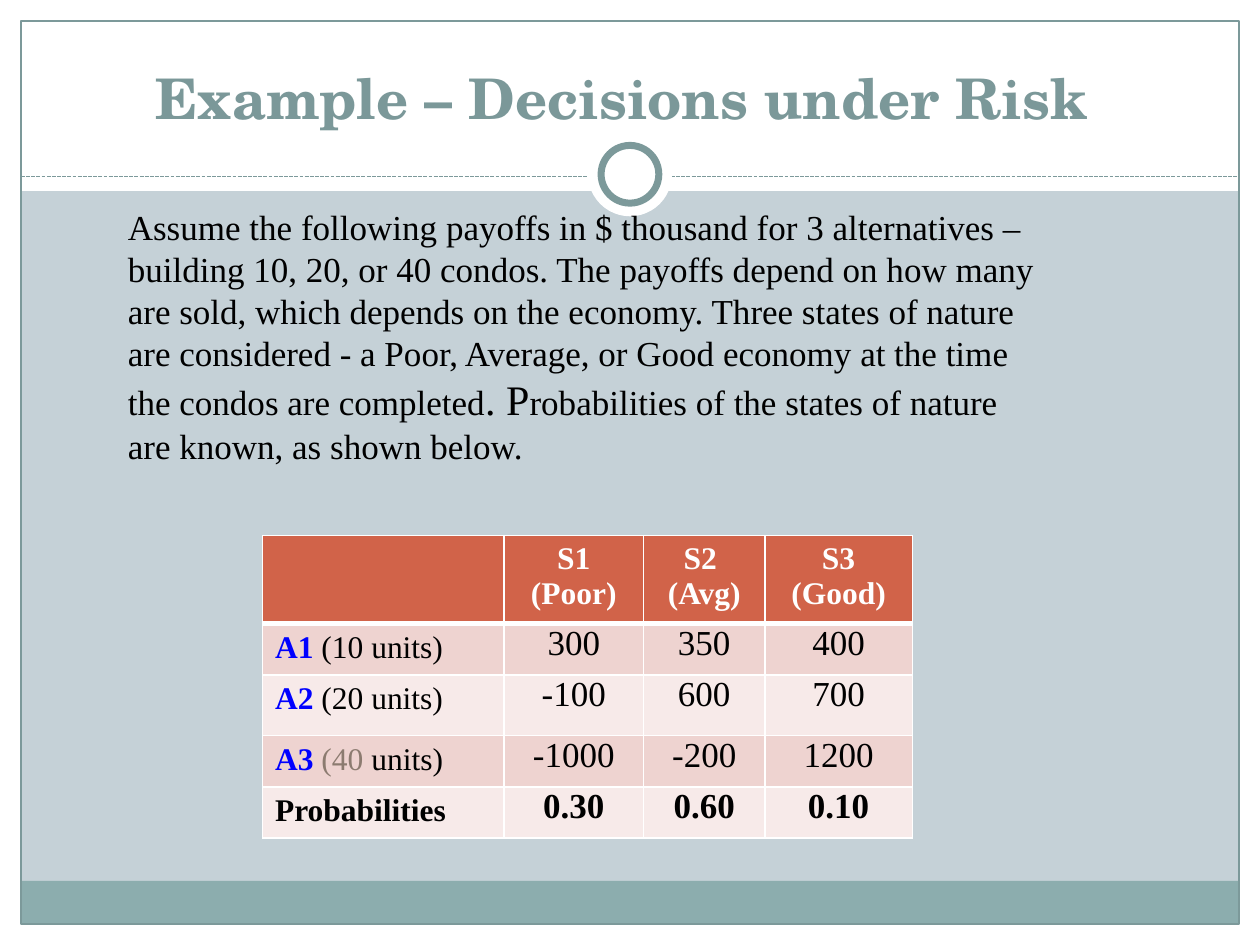
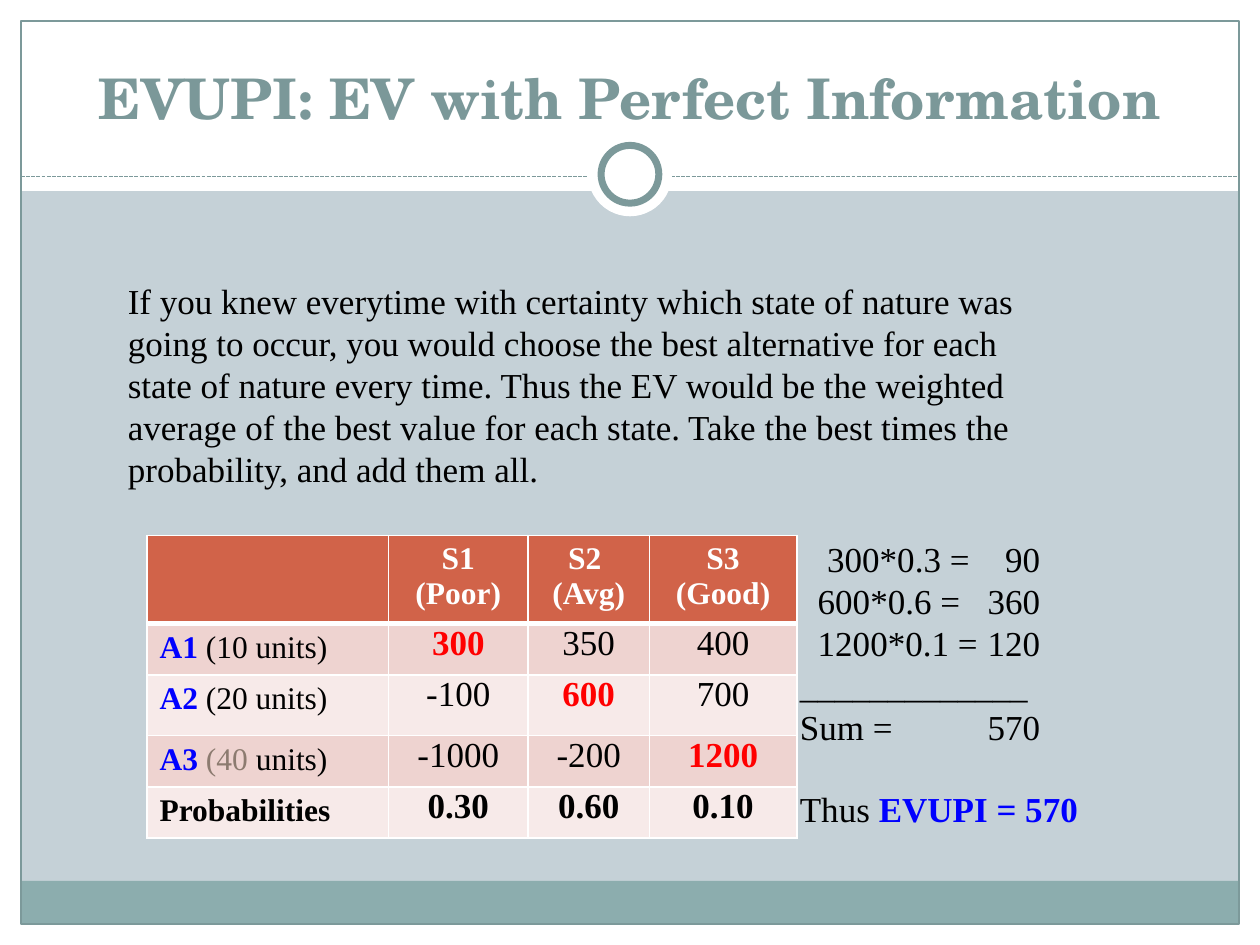
from dataclasses import dataclass
from typing import NamedTuple

from lxml import etree
from pptx import Presentation
from pptx.dml.color import RGBColor
from pptx.enum.dml import MSO_LINE
from pptx.enum.shapes import MSO_CONNECTOR, MSO_SHAPE
from pptx.enum.text import MSO_ANCHOR, PP_ALIGN
from pptx.oxml.ns import qn
from pptx.util import Emu, Inches, Pt

RECT, OVAL = MSO_SHAPE.RECTANGLE, MSO_SHAPE.OVAL
STRAIGHT, DASH = MSO_CONNECTOR.STRAIGHT, MSO_LINE.SQUARE_DOT
LEFT, CENTER = PP_ALIGN.LEFT, PP_ALIGN.CENTER
TOP, BOTTOM = MSO_ANCHOR.TOP, MSO_ANCHOR.BOTTOM

# Grid: 120 columns by 90 rows of square units
COLS, ROWS = 120, 90
WIDTH, HEIGHT = Inches(10), Inches(7.5)
UNIT = WIDTH / COLS
EDGE = 2

COLORS = {
    "back": "C5D1D7", "white": "FFFFFF", "band": "8CADAE", "rule": "7C999A",
    "title": "7B9899", "black": "000000", "header": "D16349", "odd": "EED3D0",
    "even": "F7EAE9", "blue": "0000FF", "red": "FF0000", "muted": "8C7B70",
}
SERIF, HEADING = "Times New Roman", "TeX Gyre Schola"


class Box(NamedTuple):
    x: float
    y: float
    w: float
    h: float


class Run(NamedTuple):
    text: str
    color: str = "black"
    size: float = 20
    bold: bool = False
    font: str = SERIF


@dataclass
class Part:
    box: Box
    fill: str = ""
    line: str = ""
    weight: float = 0
    kind: int = RECT


FRAME_PARTS = [
    Part(Box(0, ROWS - EDGE, COLS, EDGE), "white"),
    Part(Box(0, 0, COLS, 18.2), "white"),
    Part(Box(0, 0, EDGE, ROWS), "white"),
    Part(Box(COLS - EDGE, 0, EDGE, ROWS), "white"),
    Part(Box(EDGE, 83.9, COLS - 2 * EDGE, 4.1), "band"),
    Part(Box(EDGE, EDGE, COLS - 2 * EDGE, ROWS - 2 * EDGE), "", "rule", 0.75),
]
RING_PARTS = [
    Part(Box(56, 12.6, 8, 8), "white", kind=OVAL),
    Part(Box(57.25, 13.85, 5.5, 5.5), "white", "rule", 4, OVAL),
]

# Payoff table
COL_WIDTHS = [23, 13.3, 11.55, 14.05]
ROW_HEIGHTS = [8.4, 4.87, 5.8, 4.87, 4.87]
STATES = [("S1", "(Poor)"), ("S2 ", "(Avg)"), ("S3", "(Good)")]
LABELS = [
    [Run("A1", "blue", 18, True), Run(" (10 units)", size=18)],
    [Run("A2", "blue", 18, True), Run(" (20 units)", size=18)],
    [Run("A3 ", "blue", 18, True), Run("(40 ", "muted", 18), Run("units)", size=18)],
    [Run("Probabilities", size=18, bold=True)],
]
VALUES = [
    ["300", "350", "400"],
    ["-100", "600", "700"],
    ["-1000", "-200", "1200"],
    ["0.30", "0.60", "0.10"],
]


def u(n: float) -> Emu:
    return Emu(round(n * UNIT))


def rgb(name: str) -> RGBColor:
    return RGBColor.from_string(COLORS[name])


def write(tf, paragraphs: list, align=LEFT, anchor=TOP) -> None:
    """Fill a text frame with paragraphs, each a list of runs."""
    tf.word_wrap = True
    tf.vertical_anchor = anchor
    for i, runs in enumerate(paragraphs):
        p = tf.paragraphs[0] if i == 0 else tf.add_paragraph()
        p.alignment = align
        for run in runs:
            r = p.add_run()
            r.text = run.text
            r.font.name, r.font.size = run.font, Pt(run.size)
            r.font.bold = run.bold
            r.font.color.rgb = rgb(run.color)


def add_text(slide, box: Box, paragraphs: list, **style):
    sp = slide.shapes.add_textbox(*map(u, box))
    write(sp.text_frame, paragraphs, **style)
    return sp.text_frame


def add_part(slide, part: Part) -> None:
    sp = slide.shapes.add_shape(part.kind, *map(u, part.box))
    sp.shadow.inherit = False
    if part.fill:
        sp.fill.solid()
        sp.fill.fore_color.rgb = rgb(part.fill)
    else:
        sp.fill.background()
    if part.line:
        sp.line.color.rgb = rgb(part.line)
        sp.line.width = Pt(part.weight)
    else:
        sp.line.fill.background()


def add_rule(slide, y: float) -> None:
    line = slide.shapes.add_connector(STRAIGHT, u(EDGE), u(y), u(COLS - EDGE), u(y))
    line.line.color.rgb = rgb("rule")
    line.line.width = Pt(0.75)
    line.line.dash_style = DASH
    etree.SubElement(line._element.spPr, qn("a:effectLst"))


def add_slide(prs, title: str):
    """Start a slide with the shared frame, ring and title."""
    slide = prs.slides.add_slide(prs.slide_layouts[6])
    slide.background.fill.solid()
    slide.background.fill.fore_color.rgb = rgb("back")
    for part in FRAME_PARTS:
        add_part(slide, part)
    add_rule(slide, 16.8)
    for part in RING_PARTS:
        add_part(slide, part)
    add_text(slide, Box(4, 3, 112, 10), [[Run(title, "title", 32, True, HEADING)]],
             align=CENTER, anchor=BOTTOM)
    return slide


def style_cell(cell, fill: str, pad: tuple, top: float, bottom: float) -> None:
    """Set borders, fill and padding (inches) of a cell."""
    tc_pr = cell._tc.get_or_add_tcPr()
    for side, weight in (("L", 1), ("R", 1), ("T", top), ("B", bottom)):
        ln = etree.SubElement(tc_pr, qn(f"a:ln{side}"), w=str(Pt(weight)))
        solid = etree.SubElement(ln, qn("a:solidFill"))
        etree.SubElement(solid, qn("a:srgbClr"), val=COLORS["white"])
    cell.fill.solid()
    cell.fill.fore_color.rgb = rgb(fill)
    cell.margin_left = cell.margin_right = Inches(pad[0])
    cell.margin_top = cell.margin_bottom = Inches(pad[1])


def add_payoffs(slide, x: float, mark_best: bool = False) -> None:
    box = Box(x, 51, sum(COL_WIDTHS), sum(ROW_HEIGHTS))
    table = slide.shapes.add_table(len(ROW_HEIGHTS), len(COL_WIDTHS), *map(u, box)).table
    table.first_row = table.horz_banding = False
    for col, w in zip(table.columns, COL_WIDTHS):
        col.width = u(w)
    for row, h in zip(table.rows, ROW_HEIGHTS):
        row.height = u(h)

    for i in range(len(ROW_HEIGHTS)):
        for j in range(len(COL_WIDTHS)):
            cell = table.cell(i, j)
            fill = "header" if i == 0 else "odd" if i % 2 else "even"
            pad = (0.08, 0) if i and j else (0.1, 0.05)
            style_cell(cell, fill, pad, 3 if i == 1 else 1, 3 if i == 0 else 1)
            if i and j:
                best = mark_best and i == j
                bold = best or i == len(VALUES)
                run = Run(VALUES[i - 1][j - 1], "red" if best else "black", bold=bold)
                write(cell.text_frame, [[run]], align=CENTER)
            elif i:
                write(cell.text_frame, [LABELS[i - 1]])
            elif j:
                lines = [[Run(t, "white", 18, True)] for t in STATES[j - 1]]
                write(cell.text_frame, lines, align=CENTER)


def set_tabs(p, stops: list) -> None:
    """Add tab stops given as (grid units, alignment)."""
    tabs = etree.SubElement(p._p.get_or_add_pPr(), qn("a:tabLst"))
    for pos, algn in stops:
        etree.SubElement(tabs, qn("a:tab"), pos=str(u(pos)), algn=algn)


def add_sums(slide) -> None:
    lines = ["\t300*0.3 =\t90", "\t600*0.6 =\t360", "\t1200*0.1 =\t120",
             "_____________", "Sum =\t570"]
    result = [Run("Thus "), Run("EVUPI = 570", "blue", bold=True)]
    tf = add_text(slide, Box(75, 50.6, 31, 34), [[Run(t)] for t in lines] + [result])
    tf.paragraphs[-1].space_before = Pt(23)
    for i, p in enumerate(tf.paragraphs[:-1]):
        set_tabs(p, [(2.6 if i == 0 else 1.7, "l"), (22.9, "r")])


def main() -> None:
    prs = Presentation()
    prs.slide_width, prs.slide_height = WIDTH, HEIGHT

    # Slide 1: payoffs and probabilities
    s = add_slide(prs, "Example – Decisions under Risk ")
    add_payoffs(s, 25)
    add_text(s, Box(11, 19, 90, 26.3), [[
        Run("Assume the following payoffs in $ thousand for 3 alternatives – building 10, "
            "20, or 40 condos. The payoffs depend on how many are sold, which depends on "
            "the economy. Three states of nature are considered - a Poor, Average, or Good "
            "economy at the time the condos are completed"),
        Run(". P", size=24),
        Run("robabilities of the states of nature are known, as shown below."),
    ]])

    # Slide 2: expected value with perfect information
    s = add_slide(prs, "EVUPI: EV with Perfect Information")
    add_payoffs(s, 14, mark_best=True)
    add_text(s, Box(11, 26, 90, 21.4), [[
        Run("If you knew everytime with certainty which state of nature was going to occur, "
            "you would choose the best alternative for each state of nature every time. Thus "
            "the EV would be the weighted average of the best value for each state. Take the "
            "best times the probability, and add them all."),
    ]])
    add_sums(s)

    prs.save("out.pptx")


if __name__ == "__main__":
    main()
